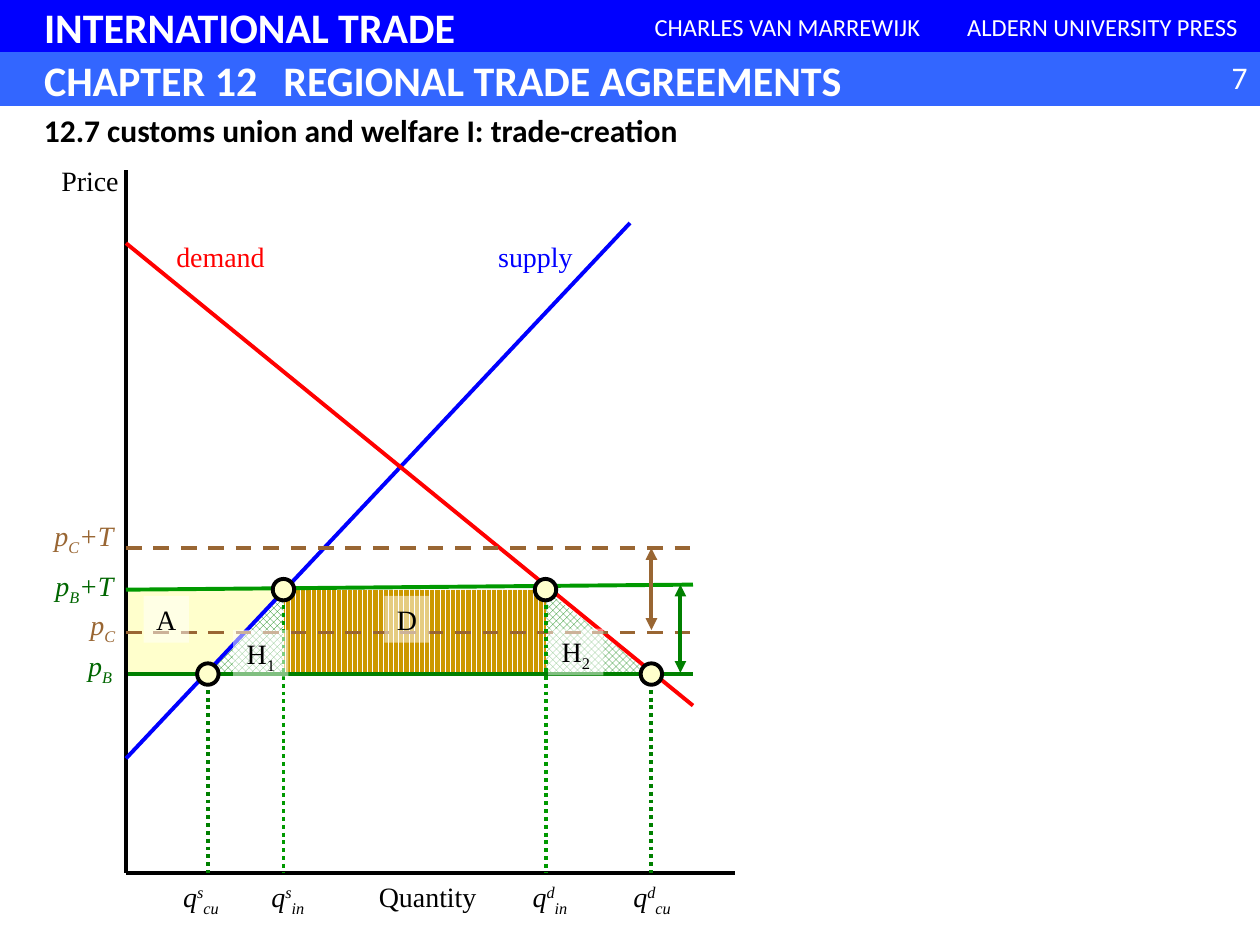
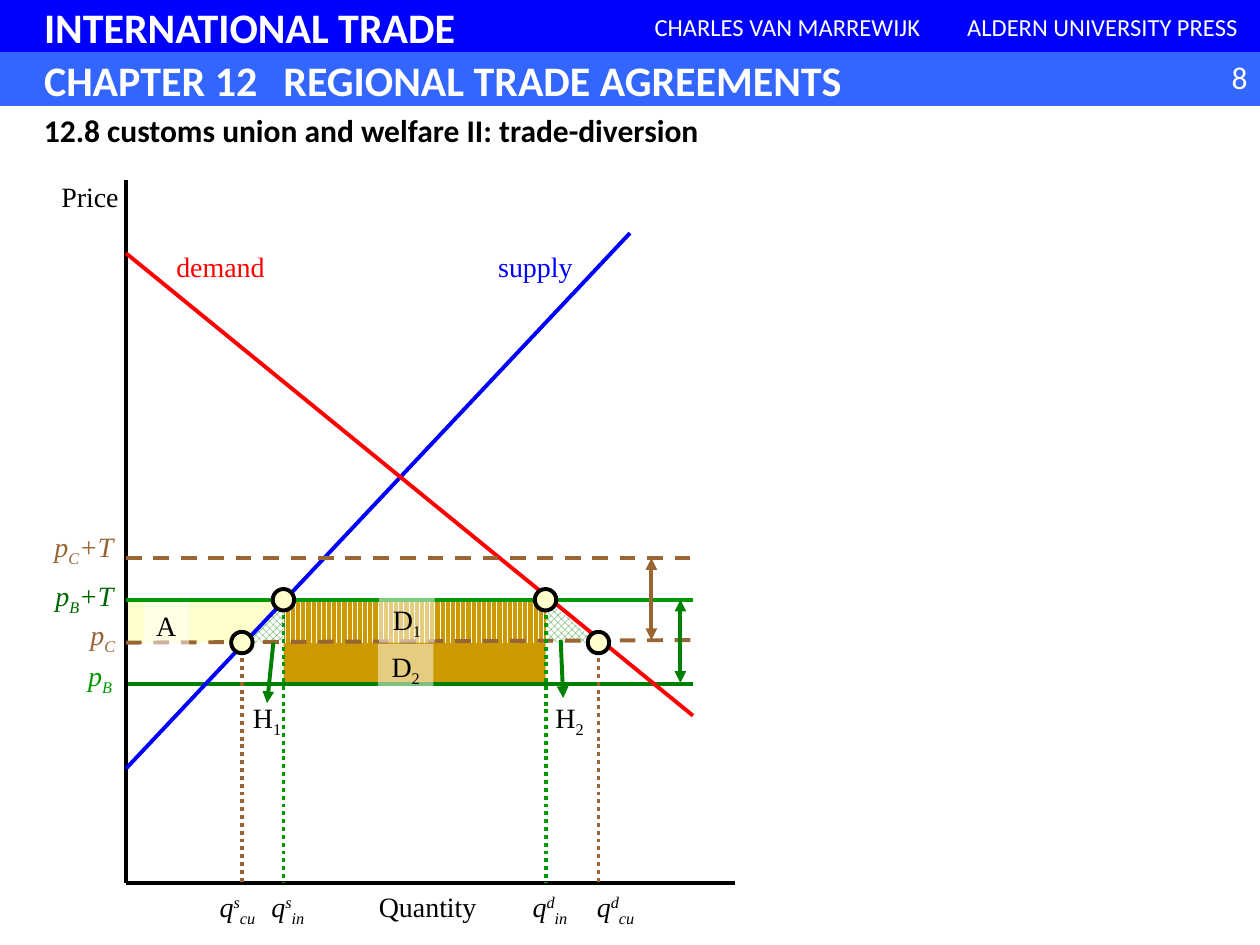
import pptx
import pptx.util
import pptx.dml.color
import pptx.enum.dml
import pptx.enum.shapes
import pptx.enum.text
import pptx.oxml
import pptx.oxml.ns

Inches, Pt = pptx.util.Inches, pptx.util.Pt
SHAPE = pptx.enum.shapes.MSO_SHAPE
DASH = pptx.enum.dml.MSO_LINE.DASH
DOT = pptx.enum.dml.MSO_LINE.ROUND_DOT
DIAMONDS = pptx.enum.dml.MSO_PATTERN.SOLID_DIAMOND
STRIPES = pptx.enum.dml.MSO_PATTERN.DARK_VERTICAL
ALIGN = pptx.enum.text.PP_ALIGN
qn = pptx.oxml.ns.qn

HEAD_FONT, GRAPH_FONT = "Calibri", "Times New Roman"
COLORS = {
    "white": "FFFFFF", "black": "000000",
    "band": "0000FF", "chapter": "3366FF",
    "supply": "0000FF", "demand": "FF0000",
    "country_c": "996633", "country_b": "008000",
    "b_tariff": "009900", "b_label": "006600",
    "producer": "FFFFCC", "revenue": "CC9900",
}

# Graph geometry in inches from the top of the price axis
AXIS_LEFT, AXIS_HEIGHT, AXIS_WIDTH, PRICE_WIDTH = 1, 5.58, 4.83, 4.5
PRICE_C_T, PRICE_B_T, PRICE_C, PRICE_B = 3, 3.33, 3.67, 4
SUPPLY_IN, DEMAND_IN = 1.25, 3.33
DOT_SIZE = 0.17
LABEL_HEIGHT = 0.37


def rgb(name):
    return pptx.dml.color.RGBColor.from_string(COLORS[name])


def sub_element(parent, tag, **attributes):
    child = parent.makeelement(qn(tag), attributes)
    parent.append(child)
    return child


def add_run(paragraph, text, size, color, font, bold=False, italic=False):
    run = paragraph.add_run()
    run.text = text
    run.font.size, run.font.name = Pt(size), font
    run.font.bold, run.font.italic = bold, italic
    run.font.color.rgb = rgb(color)
    return run


def add_area(slide, box, color, kind=SHAPE.RECTANGLE, pattern=None, outline=None, width=0.75):
    area = slide.shapes.add_shape(kind, *map(Inches, box))
    area.shadow.inherit = False
    if pattern:
        area.fill.patterned()
        area.fill.pattern = pattern
        area.fill.fore_color.rgb = rgb(color)
        area.fill.back_color.rgb = rgb("white")
    else:
        area.fill.solid()
        area.fill.fore_color.rgb = rgb(color)
    if outline:
        area.line.color.rgb = rgb(outline)
        area.line.width = Pt(width)
    else:
        area.line.fill.background()
    return area


def add_header(slide, number, heading):
    bands = [
        ((0, 0, 10, 0.42), "band", "INTERNATIONAL TRADE", 24),
        ((5, 0, 2.5, 0.42), "band", "CHARLES VAN MARREWIJK", 14),
        ((7.5, 0.01, 2.5, 0.41), "band", "ALDERN UNIVERSITY PRESS", 14),
        ((0, 0.42, 10, 0.42), "chapter", "CHAPTER 12\tREGIONAL TRADE AGREEMENTS", 24),
    ]
    for box, color, text, size in bands:
        is_title = size == 24
        frame = add_area(slide, box, color, outline=color).text_frame
        frame.vertical_anchor = pptx.enum.text.MSO_ANCHOR.MIDDLE
        frame.margin_left = Inches(0.35 if is_title else 0.1)
        paragraph = frame.paragraphs[0]
        paragraph.alignment = ALIGN.LEFT if is_title else ALIGN.CENTER
        if "\t" in text:
            tabs = sub_element(paragraph._p.get_or_add_pPr(), "a:tabLst")
            sub_element(tabs, "a:tab", pos=str(Inches(1.9)), algn="l")
        add_run(paragraph, text, size, "white", HEAD_FONT, bold=is_title)

    for box, text, color, align in (
        ((9.33, 0.41, 0.67, 0.4), str(number), "white", ALIGN.RIGHT),
        ((0.25, 0.83, 7.25, 0.4), heading, "black", ALIGN.LEFT),
    ):
        frame = slide.shapes.add_textbox(*map(Inches, box)).text_frame
        frame.word_wrap = True
        frame.paragraphs[0].alignment = align
        add_run(frame.paragraphs[0], text, 18, color, HEAD_FONT, bold=color == "black")


class Graph:
    """Supply and demand graph; lengths count from the top of its price axis."""

    def __init__(self, slide, left, top):
        self.slide, self.left, self.top = slide, left, top

    def box(self, x, y, width, height):
        return self.left + x, self.top + y, width, height

    def area(self, x, y, right, bottom, color, pattern=None):
        add_area(self.slide, self.box(x, y, right - x, bottom - y), color, pattern=pattern)

    def triangle(self, x, y, right, bottom, color, rotation=0, pattern=None):
        """Right triangle filling the given bounds after its rotation."""
        width, height = right - x, bottom - y
        if rotation:
            x, y = x + (width - height) / 2, y + (height - width) / 2
            width, height = height, width
        area = add_area(self.slide, self.box(x, y, width, height), color,
                        SHAPE.RIGHT_TRIANGLE, pattern)
        area.rotation = rotation

    def line(self, x1, y1, x2, y2, color, dash=None, arrows=()):
        ends = self.left + x1, self.top + y1, self.left + x2, self.top + y2
        line = self.slide.shapes.add_connector(
            pptx.enum.shapes.MSO_CONNECTOR.STRAIGHT, *map(Inches, ends))
        line.line.color.rgb = rgb(color)
        line.line.width = Pt(2.25)
        if dash:
            line.line.dash_style = dash
        properties = line._element.spPr
        for end in arrows:
            sub_element(properties.find(qn("a:ln")), f"a:{end}End", type="triangle")
        sub_element(properties, "a:effectLst")

    def point(self, x, y):
        box = self.box(x - DOT_SIZE / 2, y - DOT_SIZE / 2, DOT_SIZE, DOT_SIZE)
        add_area(self.slide, box, "producer", SHAPE.OVAL, outline="black", width=2.25)

    def label(self, x, y, width, parts, color="black", italic=False, veil=False):
        """Centred label; parts starting with _ or ^ are sub- or superscripts."""
        box = self.box(x, y, width, LABEL_HEIGHT)
        if veil:
            label = add_area(self.slide, box, "white")
            tint = label._element.spPr.find(qn("a:solidFill"))[0]
            sub_element(tint, "a:alpha", val="50000")
        else:
            label = self.slide.shapes.add_textbox(*map(Inches, box))
        frame = label.text_frame
        frame.word_wrap = False
        frame.vertical_anchor = pptx.enum.text.MSO_ANCHOR.TOP
        paragraph = frame.paragraphs[0]
        paragraph.alignment = ALIGN.CENTER
        for part in parts:
            run = add_run(paragraph, part.lstrip("_^"), 16, color, GRAPH_FONT, italic=italic)
            baseline = {"_": "-25000", "^": "30000"}.get(part[0])
            if baseline:
                run._r.get_or_add_rPr().set("baseline", baseline)


def add_welfare_areas(graph, supply_cu, demand_cu, price_cu):
    """Producer surplus, tariff revenue and the two efficiency triangles."""
    graph.triangle(supply_cu, PRICE_B_T, SUPPLY_IN, price_cu, "country_b", 270, DIAMONDS)
    graph.triangle(DEMAND_IN, PRICE_B_T, demand_cu, price_cu, "country_b", pattern=DIAMONDS)
    if price_cu < PRICE_B:
        graph.area(SUPPLY_IN, price_cu, DEMAND_IN, PRICE_B, "revenue")
    graph.area(SUPPLY_IN, PRICE_B_T, DEMAND_IN, price_cu, "revenue", STRIPES)
    graph.triangle(supply_cu, PRICE_B_T, SUPPLY_IN, price_cu, "producer", 90)
    graph.area(0, PRICE_B_T, supply_cu, price_cu, "producer")


def add_curves(graph, price_top, b_color, b_tariff_end, c_end):
    graph.line(0, PRICE_B, PRICE_WIDTH, PRICE_B, "country_b")
    graph.line(0, 0, 0, AXIS_HEIGHT, "black")
    graph.line(0, AXIS_HEIGHT, AXIS_WIDTH, AXIS_HEIGHT, "black")
    graph.line(0, 4.67, 4, 0.42, "supply")
    graph.line(0, 0.58, PRICE_WIDTH, 4.25, "demand")
    graph.line(0, PRICE_C, PRICE_WIDTH, c_end, "country_c", DASH)
    graph.line(0, PRICE_C_T, PRICE_WIDTH, PRICE_C_T, "country_c", DASH)
    graph.line(0, PRICE_B_T, PRICE_WIDTH, b_tariff_end, "b_tariff")

    graph.label(-0.67, price_top, 0.77, ["Price"])
    graph.label(1.83, AXIS_HEIGHT, 1.13, ["Quantity"])
    graph.label(0.25, 0.5, 1, ["demand"], "demand")
    graph.label(2.83, 0.5, 0.84, ["supply"], "supply")
    for x, y, width, parts, color in (
        (-0.41, 3.75, 0.41, ("p", "_B"), b_color),
        (-0.39, 3.42, 0.41, ("p", "_C"), "country_c"),
        (-0.68, 2.72, 0.69, ("p", "_C", "+T"), "country_c"),
        (-0.67, 3.11, 0.68, ("p", "_B", "+T"), "b_label"),
    ):
        graph.label(x, y, width, parts, color, italic=True)


def add_quantities(graph, supply_cu, demand_cu, price_cu, cu_color, cu_labels):
    quantities = [
        (DEMAND_IN, PRICE_B_T, "b_tariff", 3.11, "^d", "_in"),
        (SUPPLY_IN, PRICE_B_T, "b_tariff", 1.03, "^s", "_in"),
        (demand_cu, price_cu, cu_color, cu_labels[1], "^d", "_cu"),
        (supply_cu, price_cu, cu_color, cu_labels[0], "^s", "_cu"),
    ]
    for x, price, color, label_x, curve, regime in quantities:
        graph.line(x, price, x, AXIS_HEIGHT, color, DOT)
        graph.point(x, price)
        graph.label(label_x, AXIS_HEIGHT, 0.51, ("q", curve, regime), italic=True)


def add_tariff_arrows(graph, b_tariff_end):
    both = ("head", "tail")
    graph.line(4.17, PRICE_C_T, 4.17, 3.65, "country_c", arrows=both)
    graph.line(4.4, b_tariff_end, 4.4, 3.99, "country_b", arrows=both)


def add_graph(slide, top, supply_cu, demand_cu, price_cu, cu_color, cu_labels, price_top,
              b_color, b_tariff_end, c_end, area_labels, pointers=()):
    graph = Graph(slide, AXIS_LEFT, top)
    add_welfare_areas(graph, supply_cu, demand_cu, price_cu)
    add_curves(graph, price_top, b_color, b_tariff_end, c_end)
    add_quantities(graph, supply_cu, demand_cu, price_cu, cu_color, cu_labels)
    for x, y, parts, veil in area_labels:
        graph.label(x, y, 0.44 if len(parts) > 1 else 0.36, parts, veil=veil)
    for ends in pointers:
        graph.line(*ends, "country_b", arrows=("tail",))
    add_tariff_arrows(graph, b_tariff_end)


def main():
    deck = pptx.Presentation()
    deck.slide_width, deck.slide_height = Inches(10), Inches(7.5)
    blank = deck.slide_layouts[6]

    creation = deck.slides.add_slide(blank)
    add_header(creation, 7, "12.7 customs union and welfare I: trade-creation")
    add_graph(
        creation, top=1.35, supply_cu=0.65, demand_cu=4.17, price_cu=PRICE_B,
        cu_color="country_b", cu_labels=(0.34, 3.92), price_top=-0.1,
        b_color="b_label", b_tariff_end=3.29, c_end=PRICE_C,
        area_labels=[
            (0.14, 3.38, ("A",), True), (2.05, 3.38, ("D",), True),
            (0.85, 3.65, ("H", "_1"), True), (3.35, 3.64, ("H", "_2"), True),
        ])

    diversion = deck.slides.add_slide(blank)
    add_header(diversion, 8, "12.8 customs union and welfare II: trade-diversion")
    add_graph(
        diversion, top=1.43, supply_cu=0.92, demand_cu=3.75, price_cu=PRICE_C,
        cu_color="country_c", cu_labels=(0.63, 3.63), price_top=0.03 - 0.08,
        b_color="b_tariff", b_tariff_end=PRICE_B_T, c_end=3.65,
        area_labels=[
            (0.14, 3.35, ("A",), True), (2.01, 3.3, ("D", "_1"), True),
            (0.9, 4.08, ("H", "_1"), False), (3.3, 4.08, ("H", "_2"), False),
            (2, 3.68, ("D", "_2"), True),
        ],
        pointers=[(1.17, 3.67, 1.12, 4.15), (3.45, 3.65, 3.47, 4.11)])

    deck.save("out.pptx")


if __name__ == "__main__":
    main()
